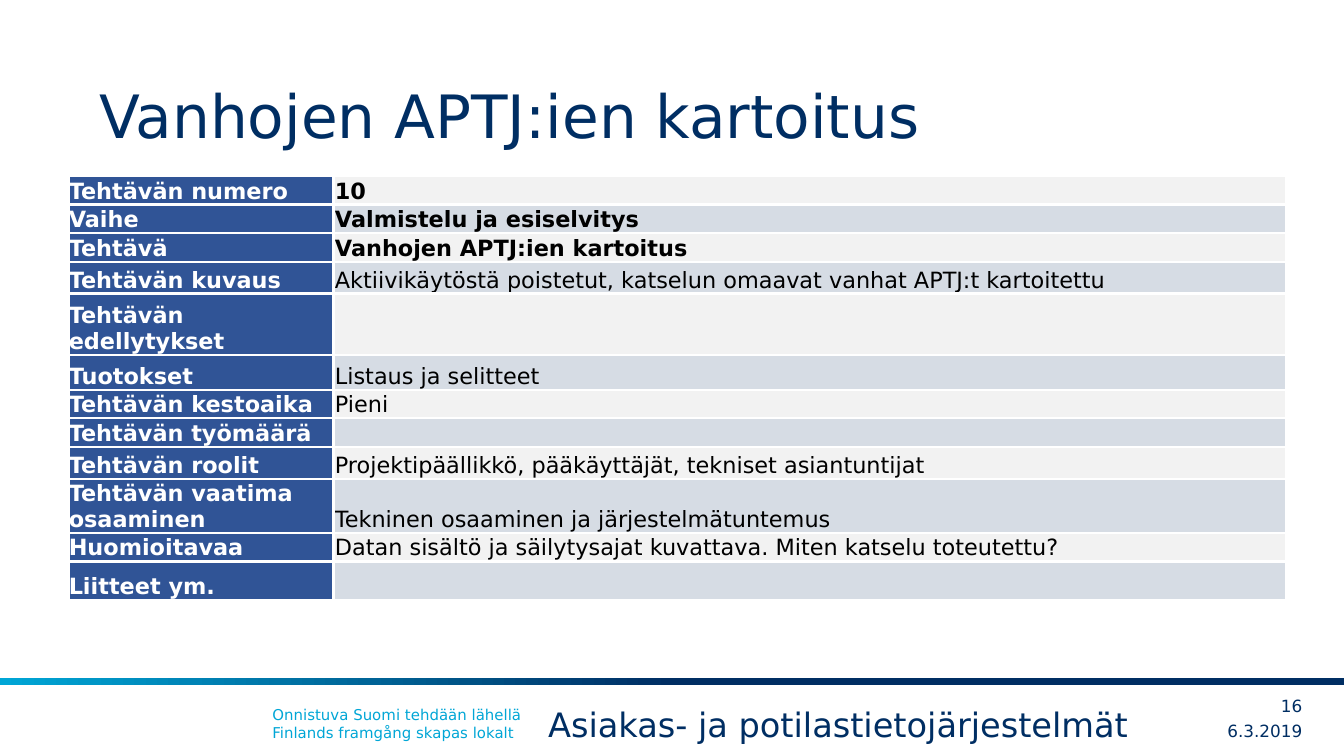
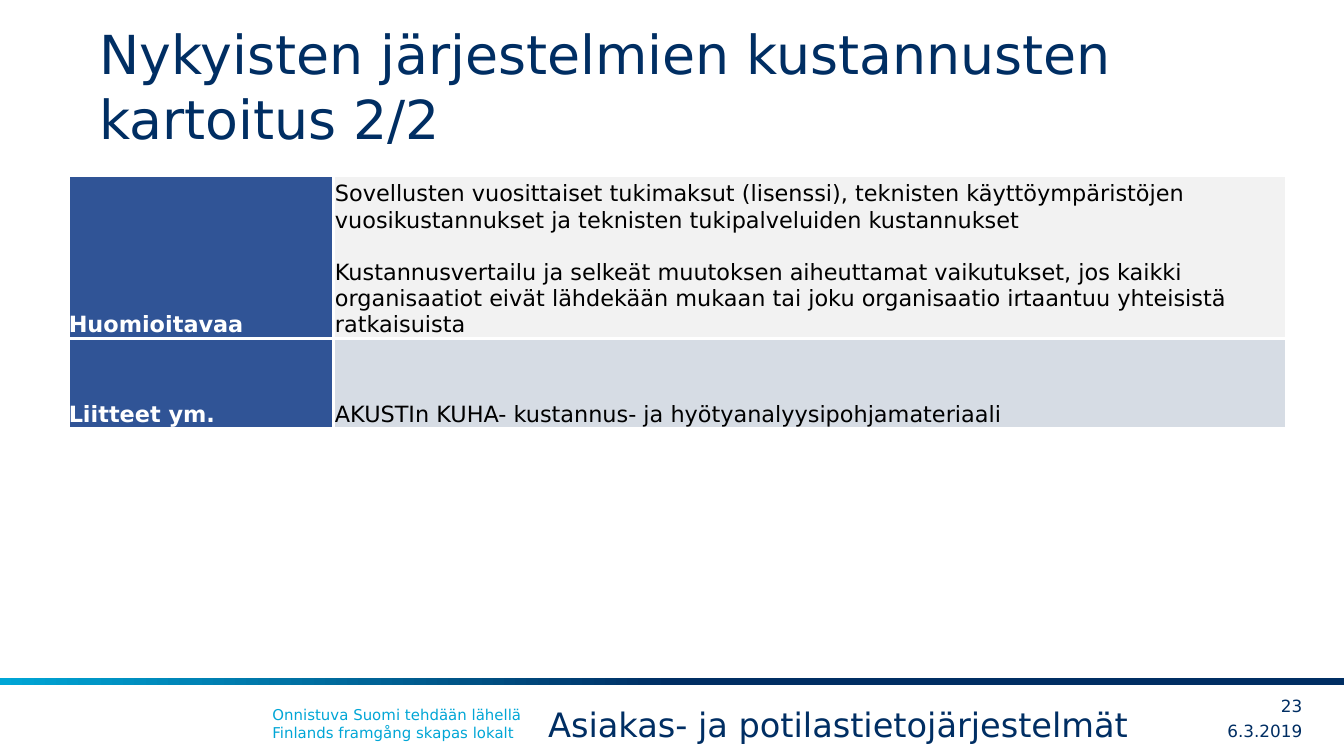
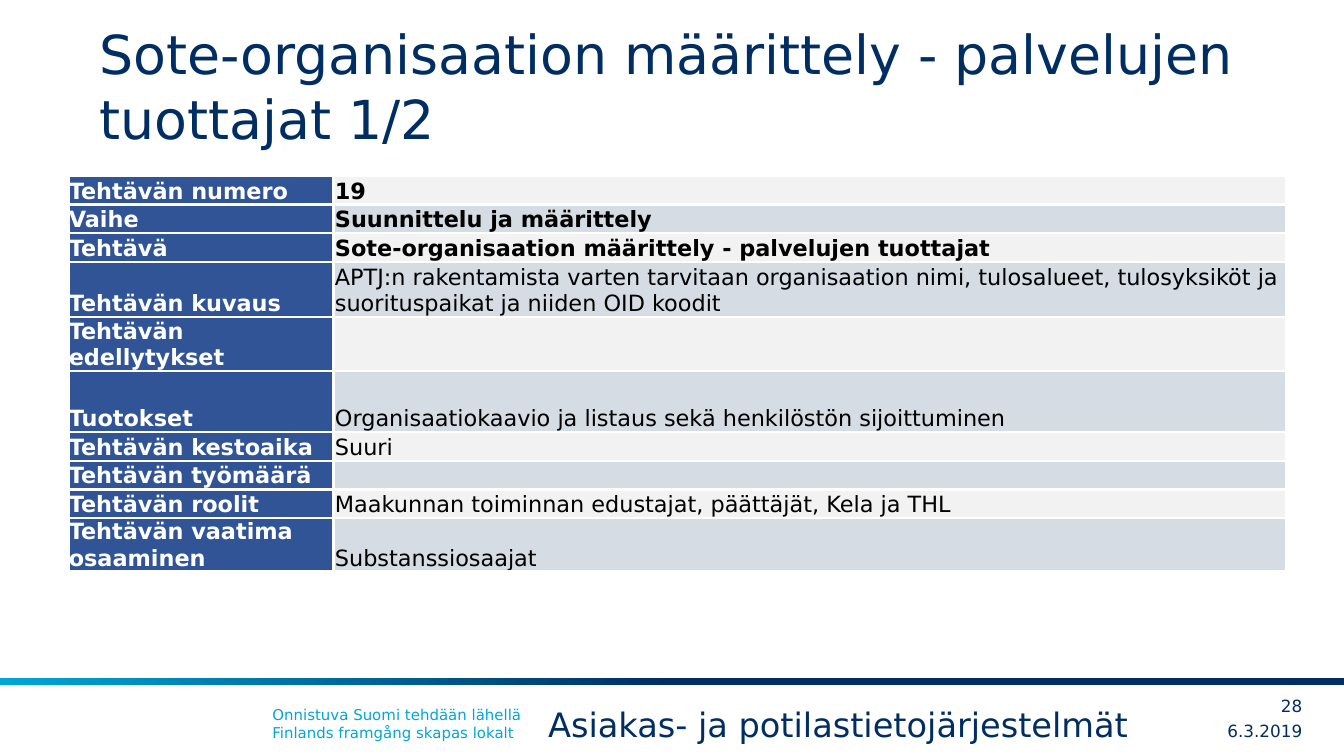
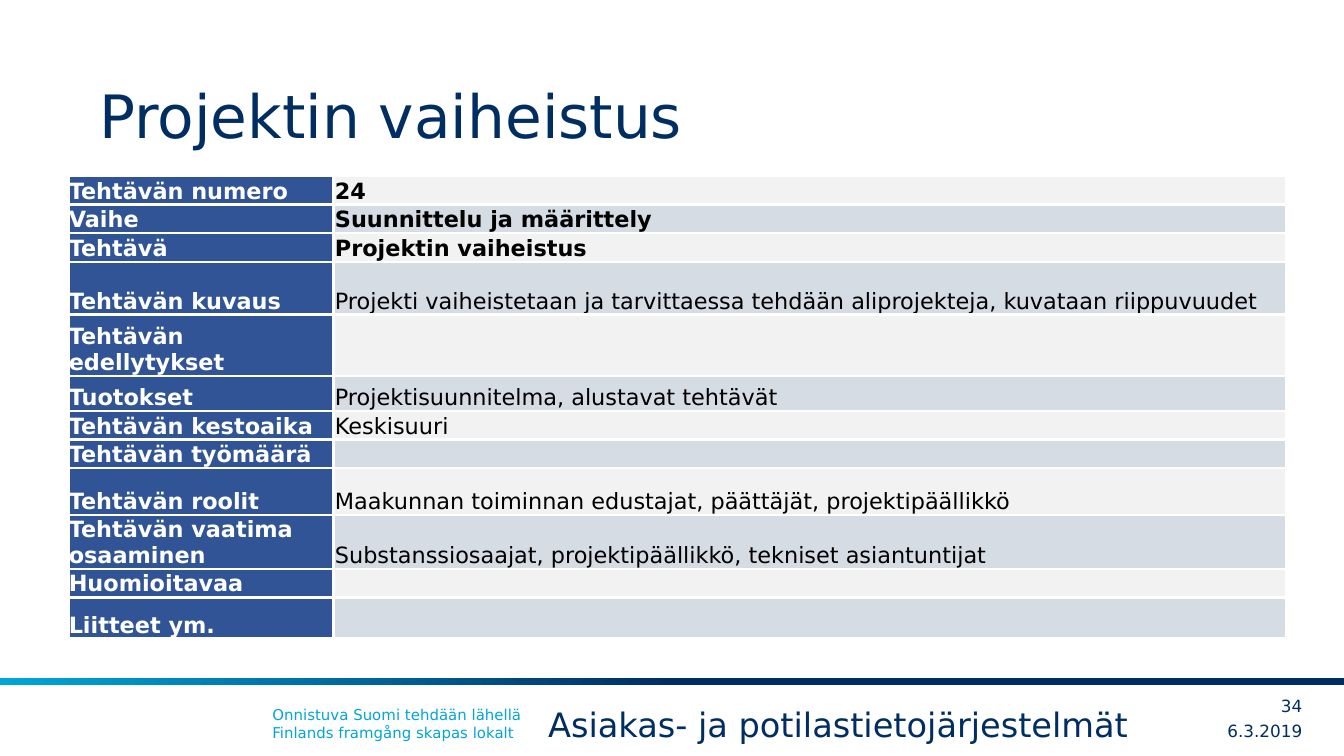
from dataclasses import dataclass

from pptx import Presentation
from pptx.dml.color import RGBColor
from pptx.enum.shapes import MSO_SHAPE
from pptx.enum.text import MSO_ANCHOR as Anchor, MSO_AUTO_SIZE as AutoSize, PP_ALIGN as Align
from pptx.oxml import parse_xml
from pptx.oxml.ns import nsdecls
from pptx.util import Cm, Pt

NAVY = RGBColor(0x00, 0x2E, 0x63)
CYAN = RGBColor(0x00, 0xA6, 0xD6)
LABEL_BLUE = RGBColor(0x30, 0x54, 0x96)
ROW_FILLS = (RGBColor(0xF2, 0xF2, 0xF2), RGBColor(0xD6, 0xDC, 0xE4))
WHITE = RGBColor(0xFF, 0xFF, 0xFF)
BLACK = RGBColor(0x00, 0x00, 0x00)
FONT = "DejaVu Sans"

TABLE_LEFT, TABLE_TOP = Cm(1.3), Cm(3.33)
COLUMN_WIDTHS = (Cm(5), Cm(18.01))
CELL_SIZE = 12
BORDER_WIDTH = Pt(1.5)
LOW = 0.52  # height of a one-line row, cm

LABELS = (
    "Tehtävän numero", "Vaihe", "Tehtävä", "Tehtävän kuvaus",
    "Tehtävän edellytykset", "Tuotokset", "Tehtävän kestoaika",
    "Tehtävän työmäärä", "Tehtävän roolit", "Tehtävän vaatima osaaminen",
    "Huomioitavaa", "Liitteet ym.",
)
BOLD_VALUES = LABELS[:3]


@dataclass(frozen=True)
class TaskSlide:
    page: int
    title: str
    values: tuple[str, ...]
    heights: tuple[float, ...]
    title_size: float = 32
    first_label: int = 0


@dataclass(frozen=True)
class FooterText:
    text: str
    left: float
    top: float
    width: float
    height: float
    size: float
    color: RGBColor = NAVY
    align: Align = Align.LEFT
    anchor: Anchor = Anchor.TOP
    inset: bool = True
    wrap: bool = True


def corner_text(text: str, left: float, top: float, width: float) -> FooterText:
    return FooterText(text, left, top, width, 0.56, 9, align=Align.RIGHT,
                      anchor=Anchor.MIDDLE, inset=False)


FOOTER = (
    FooterText("Onnistuva Suomi tehdään lähellä\nFinlands framgång skapas lokalt",
               4.9, 13.21, 16.61, 0.94, 8, CYAN),
    corner_text("6.3.2019", 22.1, 13.54, 2.51),
    FooterText("Asiakas- ja potilastietojärjestelmät",
               10.11, 13.18, 11.76, 1.03, 18, wrap=False),
)

SLIDES = (
    TaskSlide(
        16, "Vanhojen APTJ:ien kartoitus",
        ("10", "Valmistelu ja esiselvitys", "Vanhojen APTJ:ien kartoitus",
         "Aktiivikäytöstä poistetut, katselun omaavat vanhat APTJ:t kartoitettu",
         "", "Listaus ja selitteet", "Pieni", "",
         "Projektipäällikkö, pääkäyttäjät, tekniset asiantuntijat",
         "Tekninen osaaminen ja järjestelmätuntemus",
         "Datan sisältö ja säilytysajat kuvattava. Miten katselu toteutettu?", ""),
        (LOW, LOW, LOW, 0.6, 1.16, 0.66, LOW, LOW, 0.61, 1, LOW, 0.73)),
    TaskSlide(
        23, "Nykyisten järjestelmien kustannusten kartoitus 2/2",
        ("Sovellusten vuosittaiset tukimaksut (lisenssi), teknisten käyttöympäristöjen "
         "vuosikustannukset ja teknisten tukipalveluiden kustannukset\n"
         "Kustannusvertailu ja selkeät muutoksen aiheuttamat vaikutukset, jos kaikki "
         "organisaatiot eivät lähdekään mukaan tai joku organisaatio irtaantuu "
         "yhteisistä ratkaisuista",
         "AKUSTIn KUHA- kustannus- ja hyötyanalyysipohjamateriaali"),
        (3, 1.69), title_size=28.8, first_label=10),
    TaskSlide(
        28, "Sote-organisaation määrittely - palvelujen tuottajat 1/2",
        ("19", "Suunnittelu ja määrittely",
         "Sote-organisaation määrittely - palvelujen tuottajat",
         "APTJ:n rakentamista varten tarvitaan organisaation nimi, tulosalueet, "
         "tulosyksiköt ja suorituspaikat ja niiden OID koodit",
         "", "Organisaatiokaavio ja listaus sekä henkilöstön sijoittuminen", "Suuri", "",
         "Maakunnan toiminnan edustajat, päättäjät, Kela ja THL", "Substanssiosaajat"),
        (LOW, LOW, LOW, 1.01, 0.99, 1.16, LOW, LOW, LOW, 1), title_size=28.8),
    TaskSlide(
        34, "Projektin vaiheistus",
        ("24", "Suunnittelu ja määrittely", "Projektin vaiheistus",
         "Projekti vaiheistetaan ja tarvittaessa tehdään aliprojekteja, "
         "kuvataan riippuvuudet",
         "", "Projektisuunnitelma, alustavat tehtävät", "Keskisuuri", "",
         "Maakunnan toiminnan edustajat, päättäjät, projektipäällikkö",
         "Substanssiosaajat, projektipäällikkö, tekniset asiantuntijat", "", ""),
        (LOW, LOW, LOW, 1, 1.16, 0.66, LOW, LOW, 0.89, 1, LOW, 0.78)),
)


def style_paragraph(p, size: float, color: RGBColor, bold: bool = False) -> None:
    p.font.name = FONT
    p.font.size = Pt(size)
    p.font.bold = bold
    p.font.color.rgb = color


def add_band(slide) -> None:
    s = slide.shapes.add_shape(MSO_SHAPE.RECTANGLE, 0, Cm(12.82), Cm(25.4), Cm(0.13))
    s.shadow.inherit = False
    s.line.fill.background()
    s.fill.gradient()
    s.fill.gradient_angle = 180
    for stop, position, color in zip(s.fill.gradient_stops, (0.5, 1), (NAVY, CYAN)):
        stop.position = position
        stop.color.rgb = color


def add_footer_text(slide, item: FooterText) -> None:
    s = slide.shapes.add_textbox(Cm(item.left), Cm(item.top), Cm(item.width), Cm(item.height))
    tf = s.text_frame
    tf.word_wrap = item.wrap
    tf.vertical_anchor = item.anchor
    if not item.inset:
        tf.margin_left = tf.margin_top = tf.margin_right = tf.margin_bottom = 0
    p = tf.paragraphs[0]
    p.text = item.text
    p.alignment = item.align
    style_paragraph(p, item.size, item.color)


def set_title(slide, text: str, size: float) -> None:
    s = slide.shapes.title
    s.left, s.top, s.width, s.height = Cm(1.88), Cm(0.58), Cm(21.62), Cm(2.39)
    tf = s.text_frame
    tf.auto_size = AutoSize.NONE
    tf.word_wrap = True
    tf.vertical_anchor = Anchor.BOTTOM
    tf.margin_left = tf.margin_right = 0
    tf.margin_top = tf.margin_bottom = Cm(0.13)
    p = tf.paragraphs[0]
    p.text = text
    p.alignment = Align.LEFT
    style_paragraph(p, size, NAVY)


def add_borders(cell) -> None:
    """Put white lines on all sides; they must precede the fill in the XML."""
    tc_pr = cell._tc.get_or_add_tcPr()
    for i, side in enumerate(("lnL", "lnR", "lnT", "lnB")):
        tc_pr.insert(i, parse_xml(
            f'<a:{side} {nsdecls("a")} w="{BORDER_WIDTH}"><a:solidFill>'
            f'<a:srgbClr val="{WHITE}"/></a:solidFill></a:{side}>'))


def fill_cell(cell, text: str, fill: RGBColor, color: RGBColor, bold: bool, inset: Cm) -> None:
    cell.fill.solid()
    cell.fill.fore_color.rgb = fill
    add_borders(cell)
    cell.vertical_anchor = Anchor.BOTTOM
    cell.margin_left = cell.margin_top = cell.margin_right = inset
    cell.margin_bottom = 0
    cell.text = text
    for i, p in enumerate(cell.text_frame.paragraphs):
        style_paragraph(p, CELL_SIZE, color, bold)
        if i:
            p.space_before = Pt(14)
        if not text:  # an empty cell takes its line height from the end mark
            p._p.get_or_add_endParaRPr().set("sz", str(CELL_SIZE * 100))


def add_task_table(slide, task: TaskSlide) -> None:
    frame = slide.shapes.add_table(len(task.values), 2, TABLE_LEFT, TABLE_TOP,
                                   sum(COLUMN_WIDTHS), Cm(sum(task.heights)))
    table = frame.table
    table.first_row = table.horz_banding = False
    for column, width in zip(table.columns, COLUMN_WIDTHS):
        column.width = width
    labels = LABELS[task.first_label:]
    for i, (label, value, height) in enumerate(zip(labels, task.values, task.heights)):
        table.rows[i].height = Cm(height)
        fill_cell(table.cell(i, 0), label, LABEL_BLUE, WHITE, True, Cm(0))
        fill_cell(table.cell(i, 1), value, ROW_FILLS[i % 2], BLACK,
                  label in BOLD_VALUES, Cm(0.03))


def add_task_slide(prs, task: TaskSlide) -> None:
    slide = prs.slides.add_slide(prs.slide_layouts.get_by_name("Title Only"))
    add_band(slide)
    for item in (*FOOTER, corner_text(str(task.page), 23.52, 13.06, 1.09)):
        add_footer_text(slide, item)
    set_title(slide, task.title, task.title_size)
    add_task_table(slide, task)


def main() -> None:
    prs = Presentation()
    prs.slide_width, prs.slide_height = Cm(25.4), Cm(14.29)
    for task in SLIDES:
        add_task_slide(prs, task)
    prs.save("out.pptx")


if __name__ == "__main__":
    main()
